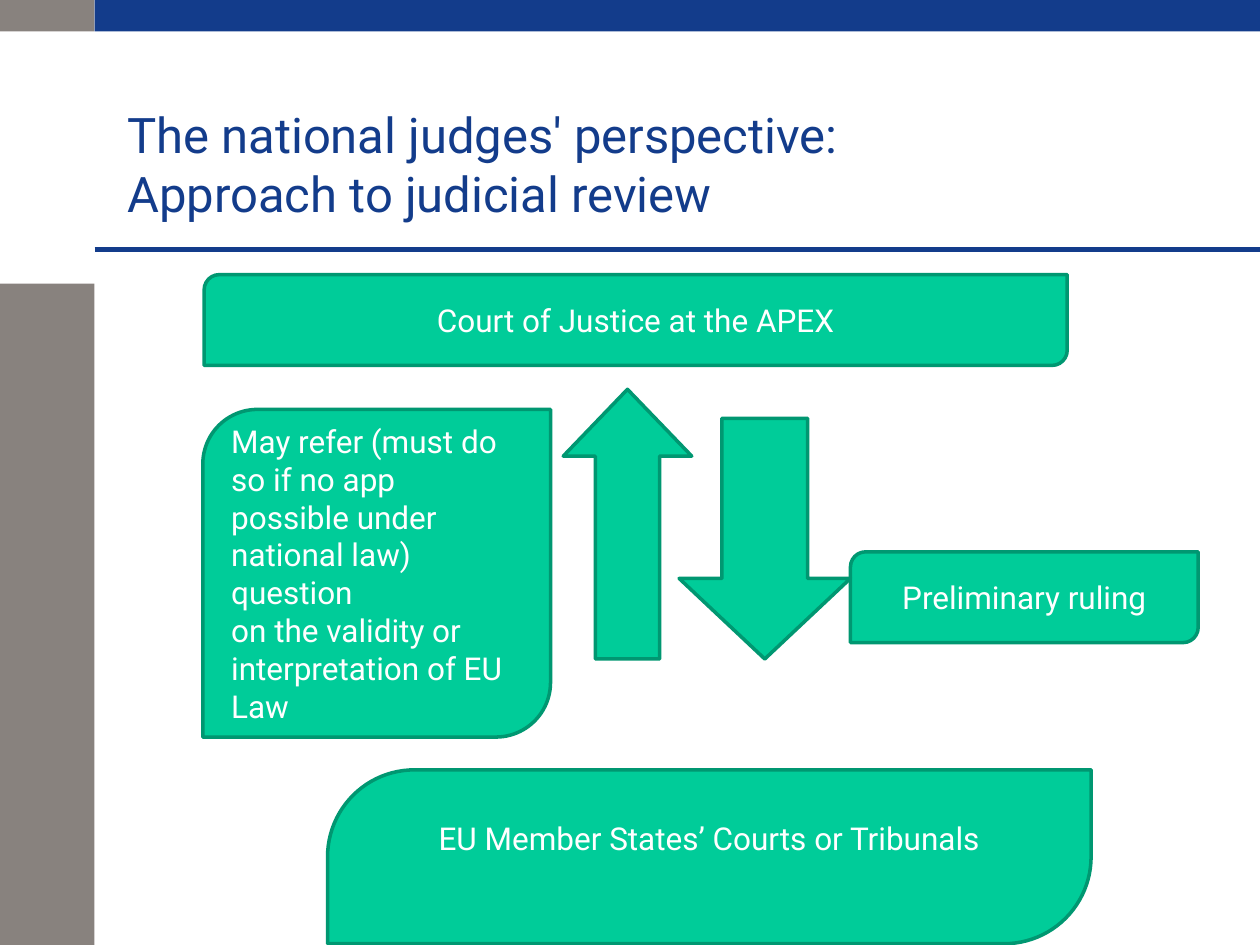
from dataclasses import dataclass

from pptx import Presentation
from pptx.dml.color import RGBColor
from pptx.enum.shapes import MSO_CONNECTOR, MSO_SHAPE
from pptx.enum.text import MSO_ANCHOR, MSO_AUTO_SIZE, PP_ALIGN
from pptx.oxml.xmlchemy import OxmlElement
from pptx.shapes.autoshape import Shape
from pptx.slide import Slide
from pptx.text.text import TextFrame
from pptx.util import Inches, Pt

RECT = MSO_SHAPE.RECTANGLE
ROUND = MSO_SHAPE.ROUND_2_DIAG_RECTANGLE
UP = MSO_SHAPE.UP_ARROW
DOWN = MSO_SHAPE.DOWN_ARROW
LINE = MSO_CONNECTOR.STRAIGHT
MIDDLE = MSO_ANCHOR.MIDDLE
LEFT = PP_ALIGN.LEFT
CENTER = PP_ALIGN.CENTER
FIXED = MSO_AUTO_SIZE.NONE


@dataclass(frozen=True)
class Theme:
    font: str = "Roboto"
    blue: RGBColor = RGBColor.from_string("133C8B")
    gray: RGBColor = RGBColor.from_string("88827E")
    green: RGBColor = RGBColor.from_string("00CC99")
    edge: RGBColor = RGBColor.from_string("009771")
    white: RGBColor = RGBColor.from_string("FFFFFF")
    head: int = 28
    text: int = 18
    rule: int = 3
    trim: int = 2


@dataclass(frozen=True)
class Area:
    left: float
    top: float
    width: float
    height: float


@dataclass(frozen=True)
class Block:
    kind: int
    area: Area
    lines: tuple[str, ...] = ()
    align: int = CENTER
    adjust: tuple[float, ...] = ()
    base: float = 0.05


THEME = Theme()
BANDS = (
    (Area(0, 2.25, 0.75, 5.25), THEME.gray),
    (Area(0, 0, 0.75, 0.25), THEME.gray),
    (Area(0.75, 0, 9.25, 0.25), THEME.blue),
)
BLOCKS = (
    Block(ROUND, Area(1.62, 2.18, 6.85, 0.72), ("Court of Justice at the APEX",)),
    Block(ROUND, Area(2.6, 6.11, 6.06, 1.38),
          ("EU Member States’ Courts or Tribunals",), adjust=(0.5, 0), base=0.35),
    Block(ROUND, Area(6.75, 4.38, 2.76, 0.72), ("Preliminary ruling",)),
    Block(ROUND, Area(1.61, 3.25, 2.76, 2.6),
          ("May refer (must do so if no app", "possible under national law) question",
           "on the validity or", "interpretation of EU Law"), align=LEFT),
    Block(DOWN, Area(5.39, 3.32, 1.36, 1.91), adjust=(0.5, 0.47)),
    Block(UP, Area(4.47, 3.09, 1.02, 2.14), adjust=(0.5, 0.52)),
)


def apply(target: object, values: dict[str, object]) -> None:
    for name, value in values.items():
        setattr(target, name, value)


def write(frame: TextFrame, lines: tuple[str, ...], size: int,
          color: RGBColor, align: int, base: float = 0.05) -> None:
    apply(frame, {"word_wrap": True, "auto_size": FIXED,
                  "vertical_anchor": MIDDLE, "margin_bottom": Inches(base)})
    frame.text = "\n".join(lines)
    for item in frame.paragraphs:
        item.alignment = align
        for run in item.runs:
            apply(run.font, {"name": THEME.font, "size": Pt(size)})
            run.font.color.rgb = color


def place(slide: Slide, kind: int, area: Area, color: RGBColor) -> Shape:
    shape = slide.shapes.add_shape(
        kind, Inches(area.left), Inches(area.top),
        Inches(area.width), Inches(area.height))
    shape.shadow.inherit = False
    shape.fill.solid()
    shape.fill.fore_color.rgb = color
    shape.line.fill.background()
    return shape


def draw_block(slide: Slide, block: Block) -> None:
    shape = place(slide, block.kind, block.area, THEME.green)
    shape.line.color.rgb = THEME.edge
    shape.line.width = Pt(THEME.trim)
    for index, value in enumerate(block.adjust):
        shape.adjustments[index] = value
    if block.lines:
        write(shape.text_frame, block.lines, THEME.text,
              THEME.white, block.align, block.base)


def draw_rule(slide: Slide, left: float, right: float, top: float) -> None:
    rule = slide.shapes.add_connector(
        LINE, Inches(left), Inches(top), Inches(right), Inches(top))
    rule.line.color.rgb = THEME.blue
    rule.line.width = Pt(THEME.rule)
    rule._element.spPr.append(OxmlElement("a:effectLst"))


def draw_title(slide: Slide, text: str, area: Area) -> None:
    title = slide.shapes.title
    apply(title, {"left": Inches(area.left), "top": Inches(area.top),
                  "width": Inches(area.width), "height": Inches(area.height)})
    write(title.text_frame, (text,), THEME.head, THEME.blue, LEFT)


def main() -> None:
    deck = Presentation()
    apply(deck, {"slide_width": Inches(10), "slide_height": Inches(7.5)})
    slide = deck.slides.add_slide(deck.slide_layouts.get_by_name("Title Only"))
    for area, color in BANDS:
        place(slide, RECT, area, color)
    draw_rule(slide, 0.75, 10, 1.98)
    draw_title(slide, "The national judges' perspective: Approach to judicial review",
               Area(0.91, 0.84, 7.33, 0.92))
    for block in BLOCKS:
        draw_block(slide, block)
    deck.save("out.pptx")


if __name__ == "__main__":
    main()
